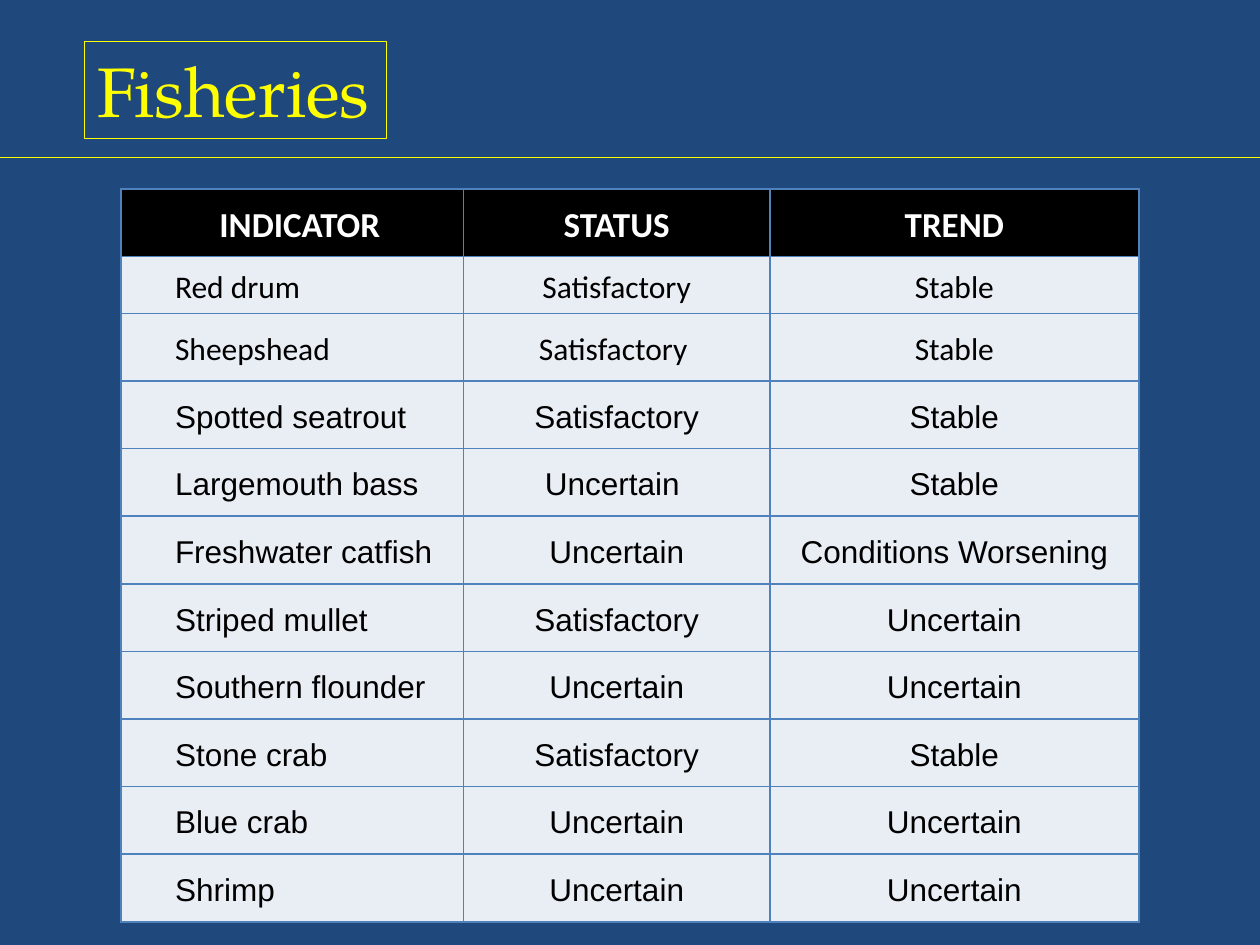
from lxml.etree import SubElement
from pptx import Presentation
from pptx.dml.color import RGBColor
from pptx.enum.shapes import MSO_CONNECTOR as Connector
from pptx.enum.text import MSO_ANCHOR as Anchor, MSO_AUTO_SIZE as AutoSize, PP_ALIGN as Align
from pptx.oxml.ns import qn
from pptx.util import Inches, Pt

NAVY = RGBColor(0x1F, 0x49, 0x7D)
YELLOW = RGBColor(0xFF, 0xFF, 0x00)
BLUE = RGBColor(0x4F, 0x81, 0xBD)
PALE = RGBColor(0xE9, 0xED, 0xF4)
BLACK = RGBColor(0, 0, 0)
WHITE = RGBColor(0xFF, 0xFF, 0xFF)

HEADINGS = ("INDICATOR", "STATUS", "TREND")
FISHERIES = (
    ("Red drum", "Satisfactory", "Stable"),
    ("Sheepshead", "Satisfactory ", "Stable"),
    ("Spotted seatrout", "Satisfactory", "Stable"),
    ("Largemouth bass", "Uncertain ", "Stable"),
    ("Freshwater catfish", "Uncertain", "Conditions Worsening"),
    ("Striped mullet", "Satisfactory", "Uncertain"),
    ("Southern flounder", "Uncertain", "Uncertain"),
    ("Stone crab", "Satisfactory", "Stable"),
    ("Blue crab", "Uncertain", "Uncertain"),
    ("Shrimp", "Uncertain", "Uncertain"),
)
CALIBRI_ROWS = 3
COLUMN_WIDTHS = (2.72, 2.43, 2.93)
FIRST_ROW_HEIGHT = 0.45


def write(frame, text, font="Calibri", size=18, color=BLACK, bold=False,
          align=Align.LEFT, indent=0, spacing=1.0):
    para = frame.paragraphs[0]
    para.alignment = align
    para.line_spacing = spacing
    if indent:
        properties = para._p.get_or_add_pPr()
        properties.set("marL", str(Inches(indent)))
        properties.set("indent", "0")
    span = para.add_run()
    span.text = text
    span.font.name = font
    span.font.size = Pt(size)
    span.font.bold = bold
    span.font.color.rgb = color


def add_title(page, left, top, width, height):
    title = page.shapes.title
    title.left, title.top = Inches(left), Inches(top)
    title.width, title.height = Inches(width), Inches(height)
    title.line.color.rgb = YELLOW
    title.line.width = Pt(0.75)
    frame = title.text_frame
    frame.word_wrap = False
    frame.auto_size = AutoSize.NONE
    frame.vertical_anchor = Anchor.TOP
    write(frame, "Fisheries", font="TeX Gyre Pagella", size=40, color=YELLOW)


def add_rule(page, left, top, width):
    rule = page.shapes.add_connector(
        Connector.STRAIGHT, Inches(left), Inches(top), Inches(left + width), Inches(top))
    rule.line.color.rgb = YELLOW
    rule.line.width = Pt(0.75)
    SubElement(rule._element.spPr, qn("a:effectLst"))


def style_cell(cell, fill):
    cell.margin_left = cell.margin_right = Inches(0.07)
    cell.margin_top = cell.margin_bottom = 0
    cell.vertical_anchor = Anchor.MIDDLE
    properties = cell._tc.get_or_add_tcPr()
    for side in ("lnL", "lnR", "lnT", "lnB"):
        border = SubElement(properties, qn(f"a:{side}"), w=str(Pt(1)))
        paint = SubElement(border, qn("a:solidFill"))
        SubElement(paint, qn("a:srgbClr"), val=str(BLUE))
    cell.fill.solid()
    cell.fill.fore_color.rgb = fill


def add_indicator_table(page, left, top, width, height):
    rows = (HEADINGS,) + FISHERIES
    table = page.shapes.add_table(
        len(rows), len(HEADINGS), Inches(left), Inches(top), Inches(width), Inches(height)).table
    for column, column_width in zip(table.columns, COLUMN_WIDTHS):
        column.width = Inches(column_width)
    regular_height = (height - FIRST_ROW_HEIGHT) / (len(rows) - 1)
    for row_index, texts in enumerate(rows):
        header = row_index == 0
        row_height = FIRST_ROW_HEIGHT if row_index == 1 else regular_height
        table.rows[row_index].height = Inches(row_height)
        for column_index, text in enumerate(texts):
            cell = table.cell(row_index, column_index)
            style_cell(cell, BLACK if header else PALE)
            name_column = column_index == 0
            write(cell.text_frame, text,
                  font="Calibri" if row_index < CALIBRI_ROWS else "Arial",
                  size=20 if header else 18,
                  color=WHITE if header else BLACK,
                  bold=header,
                  align=Align.LEFT if name_column and not header else Align.CENTER,
                  indent=(0.12 if header else 0.36) if name_column else 0,
                  spacing=1.15)


def main():
    deck = Presentation()
    deck.slide_width, deck.slide_height = Inches(10), Inches(7.5)
    page = deck.slides.add_slide(deck.slide_layouts[5])
    page.background.fill.solid()
    page.background.fill.fore_color.rgb = NAVY
    add_title(page, 0.67, 0.33, 2.4, 0.77)
    add_rule(page, 0, 1.25, 10)
    add_indicator_table(page, 0.96, 1.5, 8.08, 5.82)
    deck.save("out.pptx")


if __name__ == "__main__":
    main()
